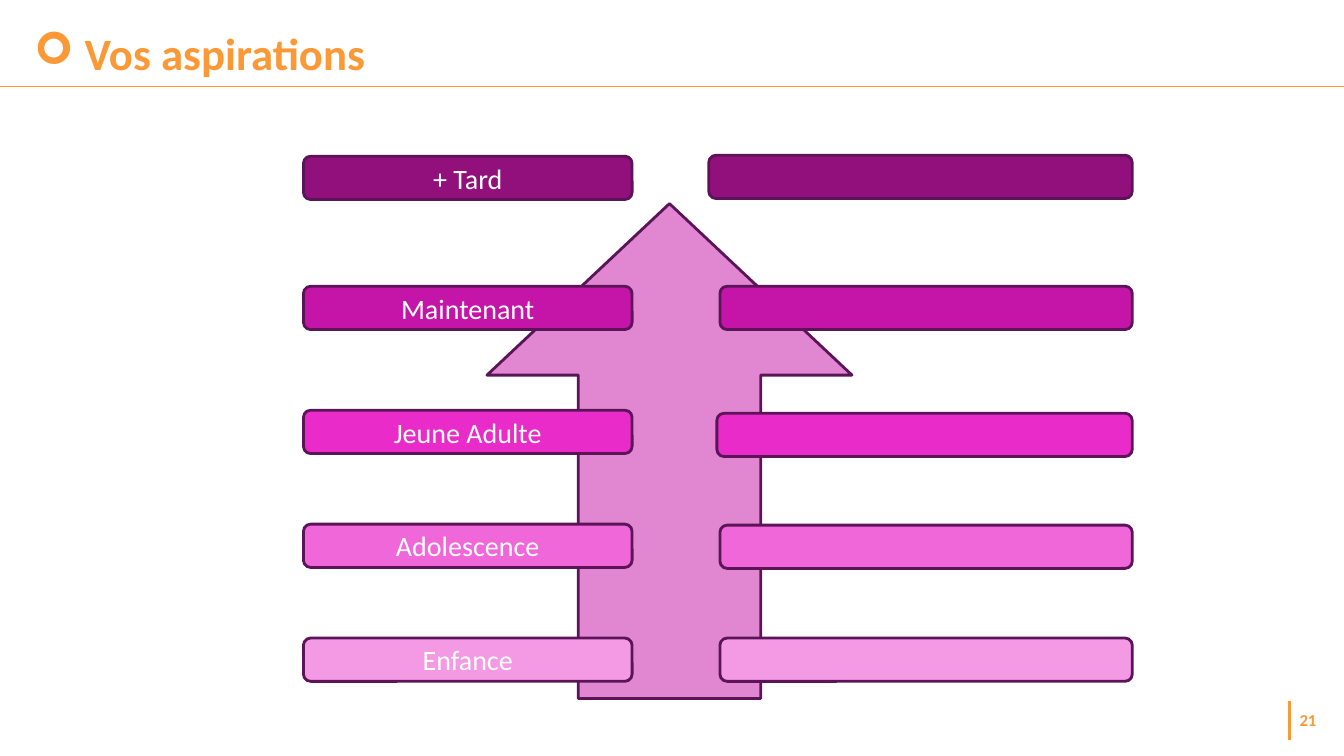
from lxml import etree
from pptx import Presentation
from pptx.dml.color import RGBColor
from pptx.enum.shapes import MSO_CONNECTOR as Connector, MSO_SHAPE as Preset
from pptx.enum.text import MSO_ANCHOR as Anchor, PP_ALIGN as Align
from pptx.oxml.ns import qn
from pptx.util import Inches, Pt

FONT = "Calibri"
WHITE = RGBColor(0xFF, 0xFF, 0xFF)
ORANGE = RGBColor(0xFC, 0x99, 0x37)
OUTLINE = RGBColor(0x5C, 0x14, 0x59)
MAGENTA = RGBColor(0xC5, 0x15, 0xA8)

BAR_HEIGHT = 0.43
LABEL_LEFT, LABEL_WIDTH = 3.01, 3.26
ANSWER_RIGHT = 11.23

# Life stage, colour, top of the label, left and top of the answer bar
STAGES = [
    ("Enfance", RGBColor(0xF4, 0x9A, 0xE5), 6.33, 7.14, 6.33),
    ("Adolescence", RGBColor(0xEF, 0x67, 0xD8), 5.2, 7.14, 5.21),
    ("Jeune Adulte", RGBColor(0xE9, 0x2B, 0xC9), 4.07, 7.11, 4.1),
    ("Maintenant", MAGENTA, 2.84, 7.14, 2.84),
    ("+ Tard", RGBColor(0x92, 0x10, 0x7C), 1.55, 7.03, 1.54),
]


def add_rule(slide, start_x, start_y, end_x, end_y, weight):
    rule = slide.shapes.add_connector(
        Connector.STRAIGHT, Inches(start_x), Inches(start_y), Inches(end_x), Inches(end_y))
    rule.line.color.rgb = ORANGE
    rule.line.width = Pt(weight)
    etree.SubElement(rule._element.spPr, qn("a:effectLst"))


def add_outlined_shape(slide, preset, left, top, width, height, color):
    shape = slide.shapes.add_shape(
        preset, Inches(left), Inches(top), Inches(width), Inches(height))
    shape.shadow.inherit = False
    shape.fill.solid()
    shape.fill.fore_color.rgb = color
    shape.line.color.rgb = OUTLINE
    shape.line.width = Pt(2)
    return shape


def add_bar(slide, left, top, width, color):
    return add_outlined_shape(
        slide, Preset.ROUNDED_RECTANGLE, left, top, width, BAR_HEIGHT, color)


def add_run(paragraph, text, size, color, bold=False):
    run = paragraph.add_run()
    run.text = text
    run.font.name = FONT
    run.font.size = Pt(size)
    run.font.bold = bold
    run.font.color.rgb = color


def add_text_box(slide, left, top, width, height, anchor):
    """Add a wrapping text box and return its first paragraph."""
    box = slide.shapes.add_textbox(Inches(left), Inches(top), Inches(width), Inches(height))
    frame = box.text_frame
    frame.word_wrap = True
    frame.vertical_anchor = anchor
    return frame.paragraphs[0]


def add_bullet(paragraph, character, color, indent):
    properties = paragraph._p.get_or_add_pPr()
    properties.set("marL", str(Inches(indent)))
    properties.set("indent", str(-Inches(indent)))
    bullet_color = etree.SubElement(properties, qn("a:buClr"))
    etree.SubElement(bullet_color, qn("a:srgbClr"), val=str(color))
    etree.SubElement(properties, qn("a:buFont"), typeface="Wingdings")
    etree.SubElement(properties, qn("a:buChar"), char=character)


def add_title(slide, text):
    paragraph = add_text_box(slide, 0.24, 0.02, 12.82, 0.83, Anchor.BOTTOM)
    add_bullet(paragraph, "➢", ORANGE, 0.5)
    paragraph.line_spacing = 0.9
    add_run(paragraph, text, 32, ORANGE, bold=True)


def add_growth_arrow(slide):
    arrow = add_outlined_shape(slide, Preset.UP_ARROW, 4.83, 2.02, 3.62, 4.91, MAGENTA)
    arrow.adjustments[0] = 0.5
    arrow.adjustments[1] = 0.47
    fill_color = arrow._element.spPr.find(qn("a:solidFill")).find(qn("a:srgbClr"))
    etree.SubElement(fill_color, qn("a:alpha"), val="51000")


def add_stage_label(slide, text, top, color):
    frame = add_bar(slide, LABEL_LEFT, top, LABEL_WIDTH, color).text_frame
    frame.vertical_anchor = Anchor.MIDDLE
    paragraph = frame.paragraphs[0]
    paragraph.alignment = Align.CENTER
    add_run(paragraph, text, 20, WHITE)


def add_slide_number(slide, number):
    add_rule(slide, 12.79, 6.95, 12.79, 7.34, 1.5)
    paragraph = add_text_box(slide, 12.79, 6.95, 0.49, 0.39, Anchor.MIDDLE)
    add_run(paragraph, number, 12, ORANGE, bold=True)


def main():
    presentation = Presentation()
    presentation.slide_width = Inches(13.33)
    presentation.slide_height = Inches(7.5)
    slide = presentation.slides.add_slide(presentation.slide_layouts[6])

    add_rule(slide, 0, 0.86, 13.33, 0.86, 1)
    add_growth_arrow(slide)
    add_title(slide, "Vos aspirations")
    for stage, color, label_top, answer_left, answer_top in STAGES:
        add_stage_label(slide, stage, label_top, color)
        add_bar(slide, answer_left, answer_top, ANSWER_RIGHT - answer_left, color)
    add_slide_number(slide, "21")

    presentation.save("out.pptx")


if __name__ == "__main__":
    main()
